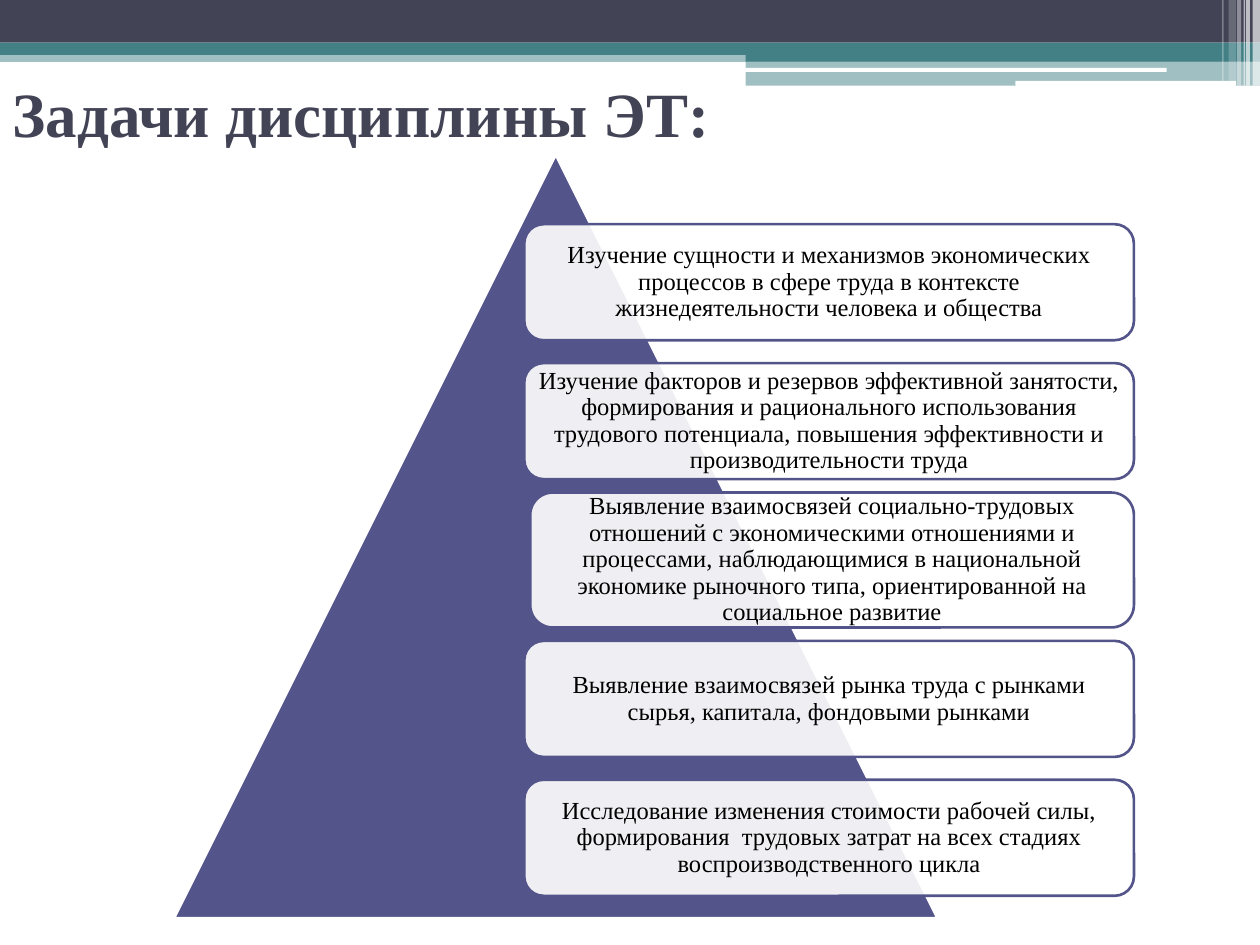
from lxml.etree import SubElement
from pptx import Presentation
from pptx.dml.color import RGBColor
from pptx.enum.shapes import MSO_SHAPE as Shape
from pptx.enum.text import MSO_ANCHOR as Anchor, PP_ALIGN as Align
from pptx.oxml.ns import qn
from pptx.util import Cm, Pt

FONT = "Times New Roman"
DARK, TEAL, VIOLET, WHITE, BLACK = "424456", "438086", "53548A", "FFFFFF", "000000"

TITLE = "Задачи дисциплины ЭТ:"
CARD_HEIGHT, TALL_CARD_HEIGHT = 2.34, 2.72
CARD_WIDTH, NARROW_CARD_WIDTH = 12.29, 12.17
TASKS = [
    ("Изучение сущности и механизмов экономических процессов в сфере труда "
     "в контексте жизнедеятельности человека и общества", CARD_WIDTH, CARD_HEIGHT),
    ("Изучение факторов и резервов эффективной занятости, формирования и "
     "рационального использования трудового потенциала, повышения "
     "эффективности и производительности труда", CARD_WIDTH, CARD_HEIGHT),
    ("Выявление взаимосвязей социально-трудовых отношений с экономическими "
     "отношениями и процессами, наблюдающимися в национальной экономике "
     "рыночного типа, ориентированной на социальное развитие",
     NARROW_CARD_WIDTH, TALL_CARD_HEIGHT),
    ("Выявление взаимосвязей рынка труда с рынками сырья, капитала, "
     "фондовыми рынками", CARD_WIDTH, CARD_HEIGHT),
    ("Исследование изменения стоимости рабочей силы, формирования  трудовых "
     "затрат на всех стадиях воспроизводственного цикла", CARD_WIDTH, CARD_HEIGHT),
]
CARDS_RIGHT, FIRST_CENTRE, CARD_PITCH = 22.86, 5.69, 2.8

BANDS = [
    (Shape.RECTANGLE, (0, 1.02, 25.4, 0.23), TEAL, 50),
    (Shape.RECTANGLE, (0, 0, 25.4, 0.86), DARK, 100),
    (Shape.RECTANGLE, (0, 0.86, 25.4, 0.25), TEAL, 100),
    (Shape.RECTANGLE, (15.03, 0.99, 10.37, 0.25), TEAL, 100),
    (Shape.RECTANGLE, (15.03, 1.22, 10.37, 0.51), TEAL, 50),
    (Shape.ROUNDED_RECTANGLE, (15.01, 1.37, 8.51, 0.08), WHITE, 100),
    (Shape.ROUNDED_RECTANGLE, (20.47, 1.63, 4.45, 0.1), WHITE, 100),
]
STRIPES = [
    (25.25, 0.15, 1.73, 65),
    (25.12, 0.08, 1.73, 65),
    (25.07, 0.03, 1.73, 60),
    (24.94, 0.08, 1.73, 40),
    (24.77, 0.15, 1.63, 20),
    (24.64, 0.03, 1.63, 30),
]


def colour(hex_string):
    """Turn a hex string into a colour."""
    return RGBColor.from_string(hex_string)


def add_shape(slide, kind, box, fill, opacity=100, line=None):
    """Add a flat shape with its box in centimetres and opacity in percent."""
    shape = slide.shapes.add_shape(kind, *map(Cm, box))
    shape.shadow.inherit = False
    shape.fill.solid()
    shape.fill.fore_color.rgb = colour(fill)
    if opacity < 100:
        fill_colour = shape.fill._xPr.find(f".//{qn('a:srgbClr')}")
        SubElement(fill_colour, qn("a:alpha"), val=str(opacity * 1000))
    if line:
        shape.line.color.rgb = colour(line)
        shape.line.width = Pt(1.5)
    else:
        shape.line.fill.background()
    return shape


def write(shape, text, size, text_colour, align, bold=False):
    """Write one vertically centred paragraph and return its frame."""
    frame = shape.text_frame
    frame.word_wrap = True
    frame.vertical_anchor = Anchor.MIDDLE
    paragraph = frame.paragraphs[0]
    paragraph.text = text
    paragraph.alignment = align
    paragraph.line_spacing = 0.9 if align == Align.CENTER else 1.0
    font = paragraph.font
    font.name, font.size, font.bold = FONT, Pt(size), bold
    font.color.rgb = colour(text_colour)
    return frame


def add_card(slide, index, text, width, height):
    """Add one task card, centred on its place in the column."""
    top = FIRST_CENTRE + index * CARD_PITCH - height / 2
    box = (CARDS_RIGHT - width, top, width, height)
    card = add_shape(slide, Shape.ROUNDED_RECTANGLE, box, WHITE, 90, VIOLET)
    frame = write(card, text, 14, BLACK, Align.CENTER)
    frame.margin_left = frame.margin_right = Cm(0.15)
    frame.margin_top = frame.margin_bottom = Cm(0.15)


def main():
    """Build the slide and save it."""
    presentation = Presentation()
    presentation.slide_width, presentation.slide_height = Cm(25.4), Cm(19.05)
    slide = presentation.slides.add_slide(presentation.slide_layouts[5])

    for kind, box, fill, opacity in BANDS:
        add_shape(slide, kind, box, fill, opacity)
    for left, width, height, opacity in STRIPES:
        add_shape(slide, Shape.RECTANGLE, (left, 0, width, height), WHITE, opacity)

    title = slide.shapes.title
    title.left, title.top, title.width, title.height = map(Cm, (0, 0.99, 16.08, 2.54))
    write(title, TITLE, 36, DARK, Align.LEFT, bold=True)

    add_shape(slide, Shape.ISOSCELES_TRIANGLE, (3.51, 3.12, 15.39, 15.39), VIOLET, line=WHITE)
    for index, task in enumerate(TASKS):
        add_card(slide, index, *task)

    presentation.save("out.pptx")


if __name__ == "__main__":
    main()
